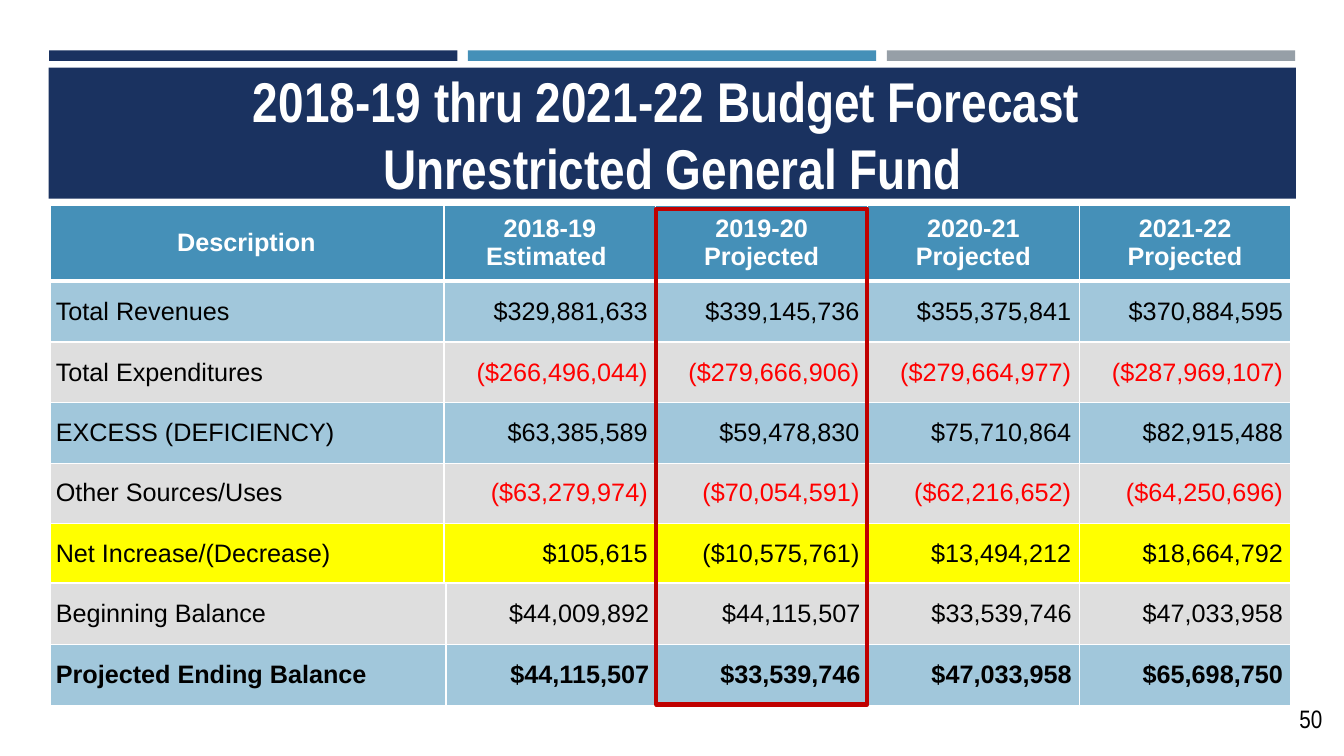
from dataclasses import dataclass
from typing import Optional

from lxml.etree import SubElement
from pptx import Presentation
from pptx.dml.color import RGBColor as Color
from pptx.enum.shapes import MSO_SHAPE as Shape
from pptx.enum.text import MSO_ANCHOR as Anchor, PP_ALIGN as Align
from pptx.oxml import parse_xml
from pptx.oxml.ns import nsdecls, qn
from pptx.util import Inches, Pt


@dataclass(frozen=True)
class Theme:
    navy: str = "1A3260"
    blue: str = "4590B8"
    slate: str = "969FA7"
    silver: str = "BFBFBF"
    yellow: str = "FFFF00"
    white: str = "FFFFFF"
    black: str = "000000"
    red: str = "FF0000"
    frame: str = "C00000"
    heading_font: str = "Arial Narrow"
    table_font: str = "Arial"
    title_size: int = 40
    body_size: int = 18
    thin: int = 1
    thick: int = 3


@dataclass(frozen=True)
class Area:
    """Left, top, width and height in grid units."""
    left: float
    top: float
    width: float
    height: float


@dataclass(frozen=True)
class Row:
    cells: tuple[str, ...]
    fill: str
    alpha: int = 50
    ink: str = "000000"
    bold: bool = False
    header: bool = False
    height: float = 6.03
    top_line: int = 1
    bottom_line: int = 1


@dataclass(frozen=True)
class Block:
    """A run of rows drawn as one table."""
    top: float
    first_column: float
    rows: tuple[Row, ...]


THEME = Theme()
YEARS = 4
TABLE_LEFT, TABLE_WIDTH = 4.84, 123.2


def grid(units: float) -> int:
    """Ten grid columns or rows to the inch."""
    return Inches(units / 10)


def place(area: Area) -> tuple[int, int, int, int]:
    return grid(area.left), grid(area.top), grid(area.width), grid(area.height)


def write(frame, text: str, *, font: str, size: int, ink: str,
          bold: bool = False, align=Align.LEFT, anchor=Anchor.TOP) -> None:
    frame.word_wrap = True
    frame.vertical_anchor = anchor
    frame.text = text
    for para in frame.paragraphs:
        para.alignment = align
        for span in para.runs:
            span.font.name = font
            span.font.size = Pt(size)
            span.font.bold = bold
            span.font.color.rgb = Color.from_string(ink)


def draw_box(page, area: Area, fill: Optional[str] = None,
             line: Optional[str] = None) -> None:
    box = page.shapes.add_shape(Shape.RECTANGLE, *place(area))
    box.shadow.inherit = False
    if fill:
        box.fill.solid()
        box.fill.fore_color.rgb = Color.from_string(fill)
    else:
        box.fill.background()
    if line:
        box.line.color.rgb = Color.from_string(line)
        box.line.width = Pt(THEME.thick)
    else:
        box.line.fill.background()


def draw_text(page, area: Area, text: str, **style) -> None:
    write(page.shapes.add_textbox(*place(area)).text_frame, text, **style)


def style_cell(cell, row: Row, first: bool) -> None:
    cell.fill.solid()
    cell.fill.fore_color.rgb = Color.from_string(row.fill)
    properties = cell._tc.get_or_add_tcPr()
    tint = properties.find(".//" + qn("a:srgbClr"))
    SubElement(tint, qn("a:alpha")).set("val", str(row.alpha * 1000))
    borders = {"lnL": THEME.thick if first else THEME.thin, "lnR": THEME.thin,
               "lnT": row.top_line, "lnB": row.bottom_line}
    for position, (side, width) in enumerate(borders.items()):
        properties.insert(position, parse_xml(
            f'<a:{side} {nsdecls("a")} w="{Pt(width)}"><a:solidFill>'
            f'<a:srgbClr val="{THEME.white}"/></a:solidFill></a:{side}>'))
    side_inset = 0.7 if first or row.header else 0.8
    cell.margin_left = cell.margin_right = grid(side_inset)
    cell.margin_top = cell.margin_bottom = grid(0.4)
    cell.vertical_anchor = Anchor.MIDDLE


def draw_block(page, block: Block) -> None:
    area = Area(TABLE_LEFT, block.top, TABLE_WIDTH, sum(row.height for row in block.rows))
    table = page.shapes.add_table(len(block.rows), YEARS + 1, *place(area)).table
    table.first_row = table.horz_banding = False
    year_width = (TABLE_WIDTH - block.first_column) / YEARS
    for index, column in enumerate(table.columns):
        column.width = grid(year_width if index else block.first_column)
    for row_index, row in enumerate(block.rows):
        table.rows[row_index].height = grid(row.height)
        for index, text in enumerate(row.cells):
            cell = table.cell(row_index, index)
            style_cell(cell, row, index == 0)
            align = Align.CENTER if row.header else Align.RIGHT if index else Align.LEFT
            write(cell.text_frame, text, font=THEME.table_font, size=THEME.body_size,
                  ink=row.ink if index else (THEME.white if row.header else THEME.black),
                  bold=row.bold, align=align, anchor=Anchor.MIDDLE)


BLOCKS = (
    Block(45.9, 39.2, (
        Row(("Other Sources/Uses", "($63,279,974)", "($70,054,591)", "($62,216,652)",
             "($64,250,696)"), THEME.silver, ink=THEME.red),
        Row(("Net Increase/(Decrease)", "$105,615", "($10,575,761)", "$13,494,212",
             "$18,664,792"), THEME.yellow, alpha=100, bottom_line=THEME.thick))),
    Block(57.9, 39.4, (
        Row(("Beginning Balance", "$44,009,892", "$44,115,507", "$33,539,746",
             "$47,033,958"), THEME.silver),
        Row(("Projected Ending Balance", "$44,115,507", "$33,539,746", "$47,033,958",
             "$65,698,750"), THEME.blue, bold=True))),
    Block(20.3, 39.2, (
        Row(("Description", "2018-19 Estimated ", "2019-20\nProjected",
             "2020-21\nProjected", "2021-22\nProjected"), THEME.blue, alpha=100,
            ink=THEME.white, bold=True, header=True, height=7.6,
            top_line=THEME.thick, bottom_line=THEME.thick),
        Row(("Total Revenues", "$329,881,633", "$339,145,736", "$355,375,841",
             "$370,884,595"), THEME.blue, top_line=THEME.thick),
        Row(("Total Expenditures", "($266,496,044)", "($279,666,906)", "($279,664,977)",
             "($287,969,107)"), THEME.silver, ink=THEME.red),
        Row(("EXCESS (DEFICIENCY)", "$63,385,589", "$59,478,830", "$75,710,864",
             "$82,915,488"), THEME.blue))),
)


def main() -> None:
    deck = Presentation()
    deck.slide_width, deck.slide_height = Inches(13.33), Inches(7.5)
    page = deck.slides.add_slide(deck.slide_layouts[6])

    # Accent bars and title band
    for index, fill in enumerate((THEME.navy, THEME.blue, THEME.slate)):
        draw_box(page, Area(4.87 + index * 41.54, 5, 40.5, 1.05), fill)
    draw_box(page, Area(4.83, 6.7, 123.7, 13), THEME.navy)
    draw_text(page, Area(6.4, 7.7, 120.6, 11.1),
              "2018-19 thru 2021-22 Budget Forecast \vUnrestricted General Fund",
              font=THEME.heading_font, size=THEME.title_size, ink=THEME.white,
              bold=True, align=Align.CENTER, anchor=Anchor.MIDDLE)

    # Forecast tables
    for block in BLOCKS:
        draw_block(page, block)

    # Page number and frame around the 2019-20 column
    draw_text(page, Area(127.9, 69.3, 5.4, 4), "50", font=THEME.heading_font,
              size=THEME.body_size, ink=THEME.black)
    draw_box(page, Area(65.1, 20.7, 20.9, 49.2), line=THEME.frame)

    deck.save("out.pptx")


if __name__ == "__main__":
    main()
